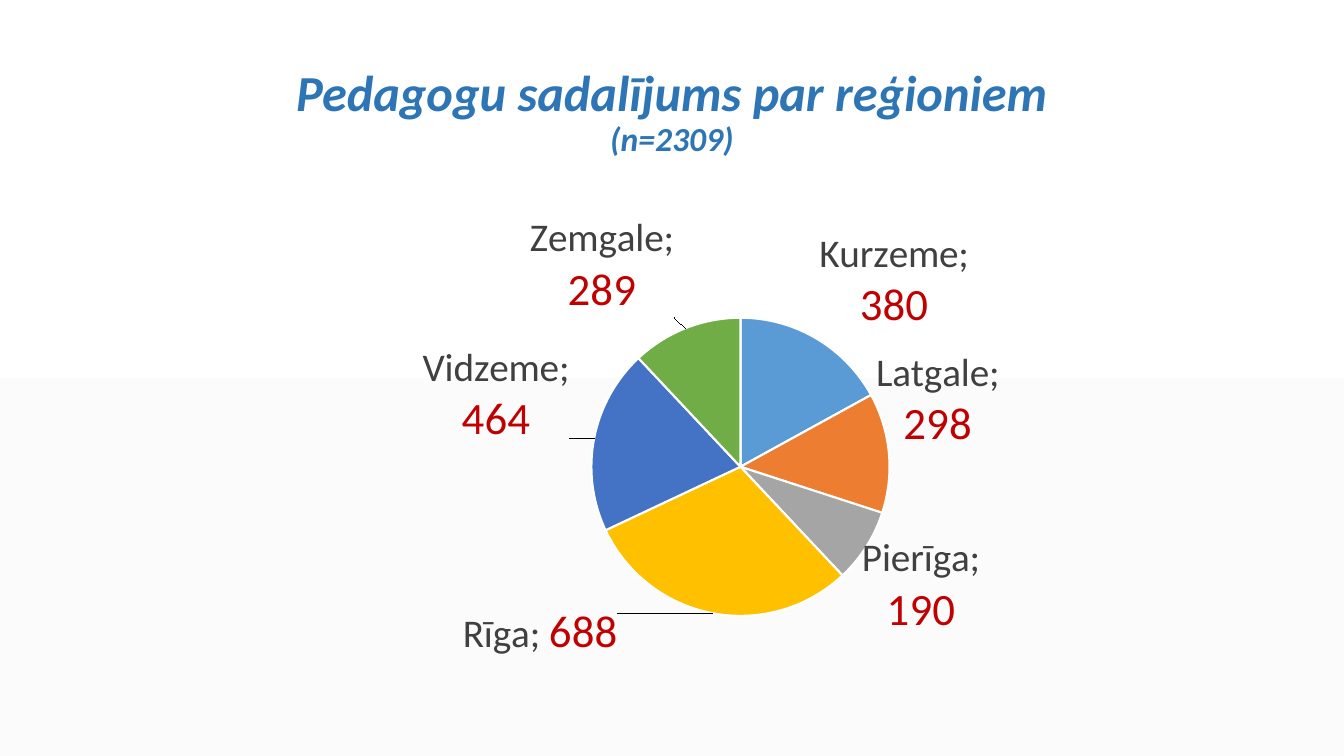
from lxml import etree
from pptx import Presentation
from pptx.chart.data import CategoryChartData
from pptx.dml.color import RGBColor
from pptx.enum.chart import XL_CHART_TYPE, XL_LABEL_POSITION
from pptx.enum.text import MSO_ANCHOR, PP_ALIGN
from pptx.oxml.ns import qn
from pptx.util import Cm, Pt

PIE = XL_CHART_TYPE.PIE
OUTSIDE = XL_LABEL_POSITION.OUTSIDE_END
MIDDLE = MSO_ANCHOR.MIDDLE
CENTER = PP_ALIGN.CENTER

# region, share in percent, teachers, slice colour, label shift as a share of the chart
REGIONS = [
    ("Kurzeme", 17, 380, "5B9BD5", (0, 0)),
    ("Latgale", 13, 298, "ED7D31", (-0.02, 0)),
    ("Pierīga", 8, 190, "A5A5A5", (-0.01, -0.03)),
    ("Rīga", 30, 688, "FFC000", (-0.1, -0.03)),
    ("Vidzeme", 20, 464, "4472C4", (-0.02, 0.02)),
    ("Zemgale", 12, 289, "70AD47", (-0.01, -0.01)),
]
PLOT_AREA = {"x": 0.35, "y": 0.24, "w": 0.32, "h": 0.61}


def rgb(hex_colour):
    return RGBColor.from_string(hex_colour)


def add_run(paragraph, text, size, colour, font="Calibri", bold=False, italic=False):
    run = paragraph.add_run()
    run.text = text
    run.font.name = font
    run.font.size = Pt(size)
    run.font.bold = bold
    run.font.italic = italic
    run.font.color.rgb = rgb(colour)


def manual_layout(values, inner=False):
    """Build a c:layout element from x, y, w and h shares."""
    layout = etree.Element(qn("c:layout"))
    manual = etree.SubElement(layout, qn("c:manualLayout"))
    settings = dict(values)
    if inner:
        settings = {"layoutTarget": "inner", "xMode": "edge", "yMode": "edge", **values}
    for tag, value in settings.items():
        etree.SubElement(manual, qn(f"c:{tag}")).set("val", str(value))
    return layout


class RegionSlide:
    heading_colour = "2E75B6"
    name_colour = "404040"
    count_colour = "C00000"

    def __init__(self, presentation):
        self.slide = presentation.slides.add_slide(presentation.slide_layouts[6])

    def background(self, top, bottom):
        fill = self.slide.background.fill
        fill.gradient()
        fill.gradient_angle = 270
        for stop, colour in zip(fill.gradient_stops, (top, bottom)):
            stop.color.rgb = rgb(colour)

    def heading(self, title, sample, left, top, width, height):
        frame = self.slide.shapes.add_textbox(left, top, width, height).text_frame
        frame.word_wrap = True
        frame.vertical_anchor = MIDDLE
        paragraph = frame.paragraphs[0]
        paragraph.alignment = CENTER
        paragraph.line_spacing = 0.9
        add_run(paragraph, title, 36, self.heading_colour, bold=True, italic=True)
        paragraph.add_line_break()
        add_run(paragraph, sample, 24, self.heading_colour, bold=True, italic=True)

    def pie(self, regions, left, top, width, height):
        data = CategoryChartData()
        data.categories = [region[0] for region in regions]
        data.add_series("Series 1", [region[1] for region in regions])
        chart = self.slide.shapes.add_chart(PIE, left, top, width, height, data).chart
        chart.has_title = False
        chart.has_legend = False
        chart.font.name = "Calibri"
        chart.font.size = Pt(10)
        chart.font.color.rgb = rgb("000000")
        plot = chart.plots[0]
        plot.vary_by_categories = True
        series = plot.series[0]

        labels = series.data_labels
        labels.show_category_name = True
        labels.show_value = True
        labels.position = OUTSIDE
        labels.font.name = "Calibri"
        labels.font.size = Pt(28)
        labels.font.color.rgb = rgb(self.name_colour)

        for index, (name, _, count, colour, _) in enumerate(regions):
            point = series.points[index]
            point.format.fill.solid()
            point.format.fill.fore_color.rgb = rgb(colour)
            point.format.line.color.rgb = rgb("FFFFFF")
            point.format.line.width = Pt(1.5)
            paragraph = point.data_label.text_frame.paragraphs[0]
            add_run(paragraph, f"{name}; ", 28, self.name_colour)
            add_run(paragraph, str(count), 32, self.count_colour)
            point.data_label.position = OUTSIDE
        self.place_parts(chart, [region[4] for region in regions])

    def place_parts(self, chart, shifts):
        """Fix the pie's place and move each label from its default place."""
        plot_area = chart.element.find(".//" + qn("c:plotArea"))
        for layout in plot_area.findall(qn("c:layout")):
            plot_area.remove(layout)
        plot_area.insert(0, manual_layout(PLOT_AREA, inner=True))
        for label, (x, y) in zip(plot_area.iter(qn("c:dLbl")), shifts):
            label.insert(1, manual_layout({"x": x, "y": y}))


def main():
    presentation = Presentation()
    presentation.slide_width = Cm(33.87)
    presentation.slide_height = Cm(19.05)
    page = RegionSlide(presentation)
    page.background("FFFFFF", "FBFBFB")
    page.heading("Pedagogu sadalījums par reģioniem", "(n=2309)",
                 Cm(2.33), Cm(1.01), Cm(29.21), Cm(3.68))
    page.pie(REGIONS, Cm(6.6), Cm(5.05), Cm(23.65), Cm(12.32))
    presentation.save("out.pptx")


if __name__ == "__main__":
    main()
